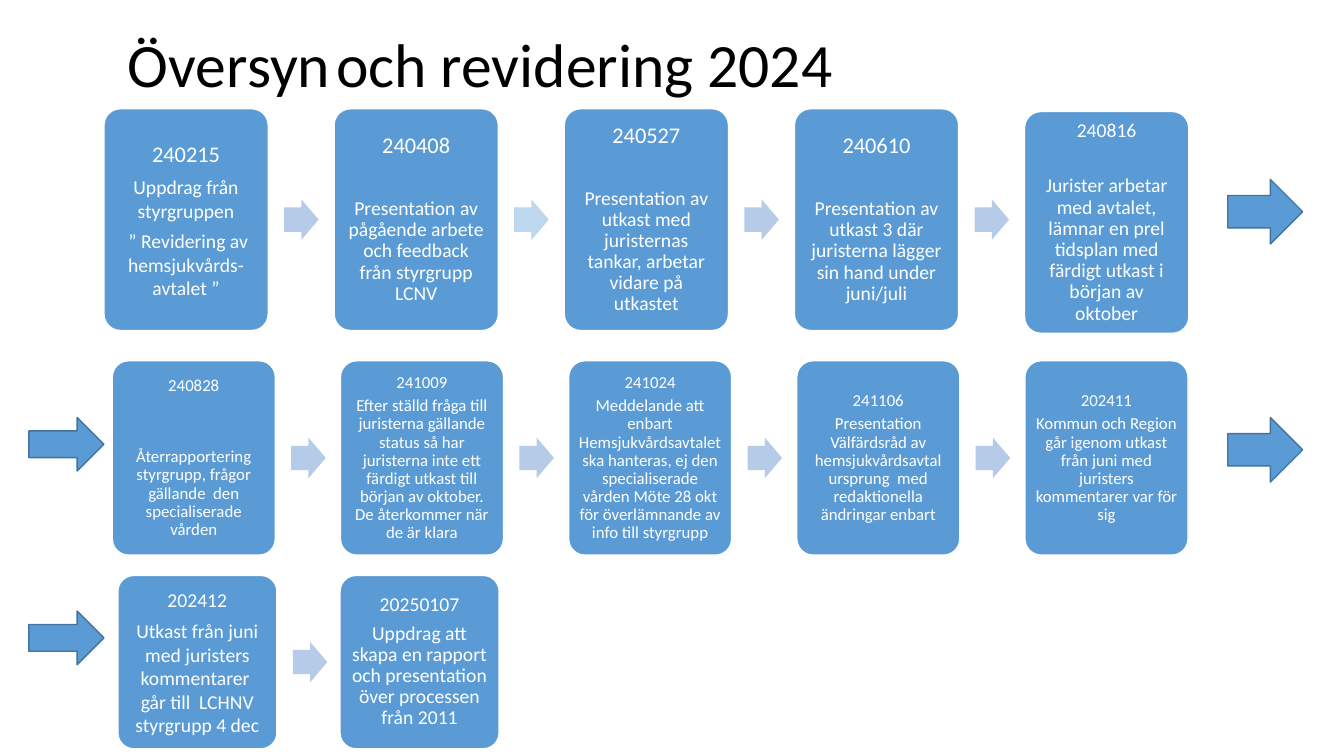
from dataclasses import dataclass

from pptx import Presentation
from pptx import util as u
from pptx.dml.color import RGBColor
from pptx.enum import shapes, text

BLUE = RGBColor(0x5B, 0x9B, 0xD5)
DARK_BLUE = RGBColor(0x43, 0x73, 0x9E)
PALE_BLUE = RGBColor(0xB5, 0xCB, 0xE7)
LIGHT_BLUE = RGBColor(0xBD, 0xD7, 0xEE)
WHITE = RGBColor(0xFF, 0xFF, 0xFF)
BLACK = RGBColor(0, 0, 0)
FONT = "Calibri"


@dataclass
class Step:
    date: str
    texts: list
    gap: float  # points between the date and the text
    date_size: int = 14
    size: int = 14
    spacing: float = 0.9
    drop: float = 0  # cm below the row's top
    arrow_fill: RGBColor = PALE_BLUE  # arrow leading to the next step


SPRING = [
    Step("240215", ["Uppdrag från styrgruppen",
                    " ” Revidering av hemsjukvårds-avtalet ”"], 6, 16, spacing=1),
    Step("240408", ["Presentation av pågående arbete och feedback från styrgrupp LCNV"],
         28.5, 16, arrow_fill=LIGHT_BLUE),
    Step("240527", ["Presentation av utkast med juristernas tankar, arbetar vidare på "
                    "utkastet"], 28.5, 16),
    Step("240610", ["Presentation av utkast 3 där juristerna lägger sin hand under "
                    "juni/juli"], 28.5, 16),
    Step("240816", ["Jurister arbetar med avtalet, lämnar en prel tidsplan med färdigt "
                    "utkast i början av oktober"], 24.5, drop=0.07),
]
AUTUMN = [
    Step("240828", ["Återrapportering styrgrupp, frågor gällande  den specialiserade "
                    "vården"], 38, 12, 12),
    Step("241009", ["Efter ställd fråga till juristerna gällande status så har juristerna "
                    "inte ett färdigt utkast till början av oktober. De återkommer när "
                    "de är klara"], 4, 12, 12),
    Step("241024", ["Meddelande att enbart Hemsjukvårdsavtalet ska hanteras, ej den "
                    "specialiserade vården Möte 28 okt för överlämnande av info till "
                    "styrgrupp"], 4, 12, 12),
    Step("241106", ["Presentation Välfärdsråd av hemsjukvårdsavtal ursprung  med "
                    "redaktionella ändringar enbart"], 4, 12, 12),
    Step("202411", ["Kommun och Region går igenom utkast från juni med juristers "
                    "kommentarer var för sig"], 4, 12, 12),
]
WINTER = [
    Step("202412", ["Utkast från juni med juristers kommentarer  går till  LCHNV "
                    "styrgrupp 4 dec"], 5.5, spacing=1),
    Step("20250107", ["Uppdrag att skapa en rapport och presentation över processen "
                      "från 2011"], 5),
]


def add_block(page, kind, box, fill, line=None):
    """Add a preset shape in box (left, top, width, height in cm)."""
    block = page.shapes.add_shape(kind, *[u.Cm(length) for length in box])
    block.shadow.inherit = False
    block.fill.solid()
    block.fill.fore_color.rgb = fill
    if line is None:
        block.line.fill.background()
    else:
        block.line.color.rgb = line
        block.line.width = u.Pt(1)
    return block


def add_title(page, box):
    title = page.shapes.title
    title.left, title.top, title.width, title.height = [u.Cm(length) for length in box]
    frame = title.text_frame
    frame.vertical_anchor = text.MSO_ANCHOR.MIDDLE
    para = frame.paragraphs[0]
    para.alignment = text.PP_ALIGN.LEFT
    para.font.name = FONT
    para.font.color.rgb = BLACK
    for words, size in [("Översyn", 44), (" ", 18), ("och revidering 2024", 44)]:
        span = para.add_run()
        span.text = words
        span.font.size = u.Pt(size)


def add_card(page, box, step, inset):
    card = add_block(page, shapes.MSO_SHAPE.ROUNDED_RECTANGLE, box, BLUE, WHITE)
    card.adjustments[0] = 0.1
    frame = card.text_frame
    frame.word_wrap = True
    frame.vertical_anchor = text.MSO_ANCHOR.MIDDLE
    frame.margin_left = frame.margin_right = u.Cm(inset)
    frame.margin_top = frame.margin_bottom = u.Cm(inset)
    lines = [step.date] + step.texts
    for index, words in enumerate(lines):
        para = frame.add_paragraph() if index else frame.paragraphs[0]
        para.text = words
        para.alignment = text.PP_ALIGN.CENTER
        para.line_spacing = step.spacing
        para.font.name = FONT
        para.font.size = u.Pt(step.size if index else step.date_size)
        para.font.color.rgb = WHITE
        if index < len(lines) - 1:
            para.space_after = u.Pt(5 if index else step.gap)


def add_row(page, box, pitch, steps, inset):
    """Place the steps from the first card's box, with an arrow between neighbours."""
    left, top, width, height = box
    arrow_width, arrow_height = 0.87, 1.02
    for index, step in enumerate(steps):
        x = left + index * pitch
        add_card(page, (x, top + step.drop, width, height), step, inset)
        if index < len(steps) - 1:
            arrow = add_block(page, shapes.MSO_SHAPE.RIGHT_ARROW,
                              (x + width + 0.4, top + (height - arrow_height) / 2,
                               arrow_width, arrow_height), step.arrow_fill)
            arrow.adjustments[0] = 0.6


def add_row_links(page):
    """Large arrows that carry the flow from one row's end to the next row's start."""
    for left, top, height in [(30.94, 4.52, 1.63), (0.73, 10.52, 1.35),
                              (30.94, 10.52, 1.63), (0.73, 15.4, 1.35)]:
        add_block(page, shapes.MSO_SHAPE.RIGHT_ARROW, (left, top, 1.89, height),
                  BLUE, DARK_BLUE)


def main():
    deck = Presentation()
    deck.slide_width, deck.slide_height = u.Cm(33.87), u.Cm(19.05)
    page = deck.slides.add_slide(deck.slide_layouts.get_by_name("Title Only"))

    add_title(page, (2.97, 0.53, 26.31, 2.13))
    # Timeline rows
    add_row(page, (2.62, 2.74, 4.14, 5.59), 5.8, SPRING, 0.17)
    add_row(page, (2.83, 9.09, 4.11, 4.9), 5.75, AUTUMN, 0.13)
    add_row(page, (2.97, 14.5, 4.01, 4.37), 5.6, WINTER, 0.15)
    add_row_links(page)

    deck.save("out.pptx")


if __name__ == "__main__":
    main()
